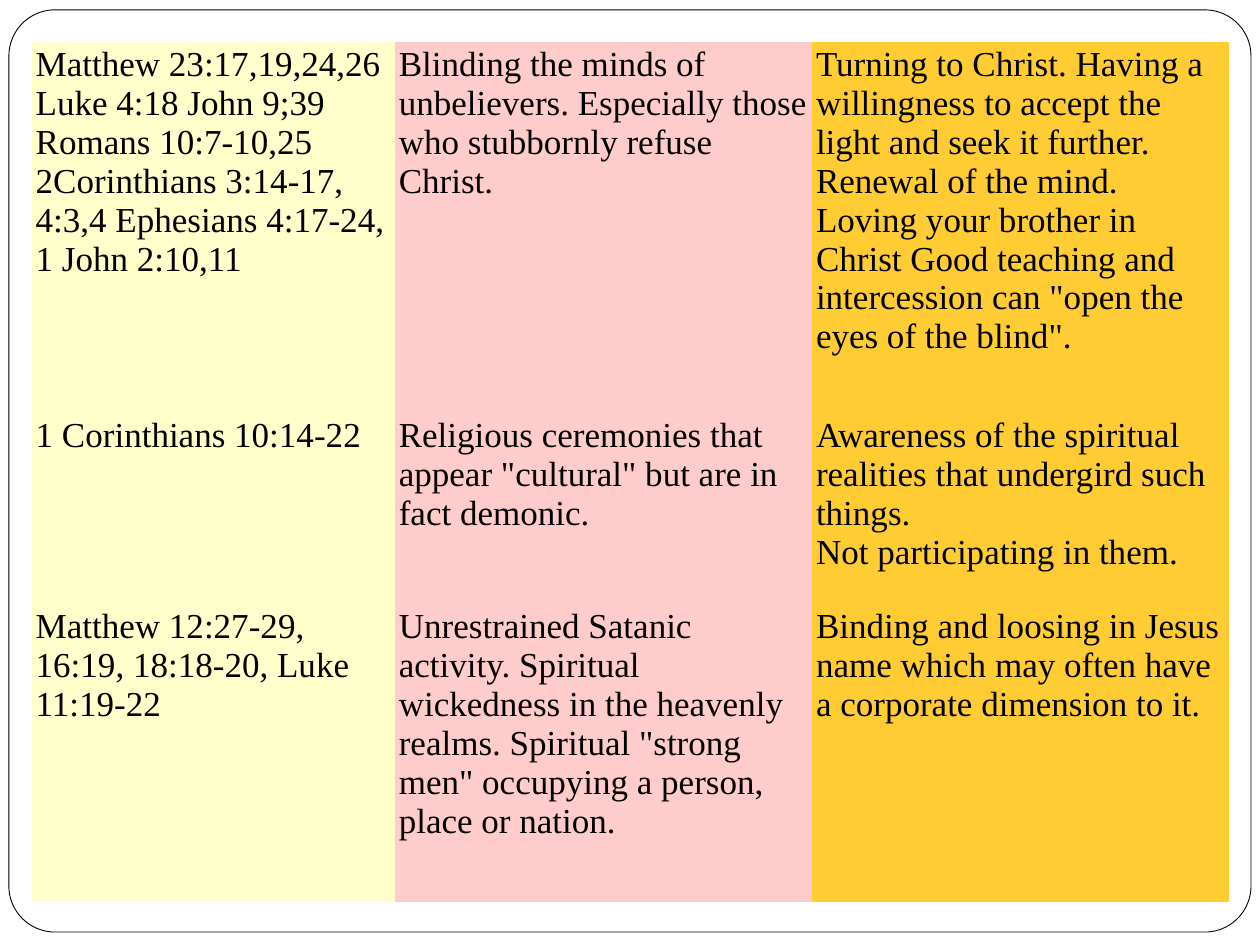
import dataclasses

import pptx
import pptx.dml.color
import pptx.enum.shapes
import pptx.util

Cm = pptx.util.Cm
RGB = pptx.dml.color.RGBColor.from_string


@dataclasses.dataclass(frozen=True)
class Theme:
    paper: str = "FFFFFF"
    ink: str = "000000"
    columns: tuple = ("FFFFCC", "FFCCCC", "FFCC33")  # scripture, problem, remedy
    font: str = "Times New Roman"
    text_size: int = 20
    frame_line: float = 0.5


THEME = Theme()
NO_STYLE_NO_GRID = "{2D5ABB26-0587-4C30-8999-92F81FD0307C}"

COLUMN_SHARES = (7.32, 8.41, 8.41)
ROW_SHARES = (7.47, 3.86, 6.02)

# Scripture, problem, remedy; a line break starts a new paragraph
TEACHINGS = [
    ("Matthew 23:17,19,24,26 Luke 4:18 John 9;39 Romans 10:7-10,25 "
     "2Corinthians 3:14-17, 4:3,4 Ephesians 4:17-24, 1 John 2:10,11",
     "Blinding the minds of unbelievers. Especially those who stubbornly refuse Christ.",
     "Turning to Christ. Having a willingness to accept the light and seek it further. "
     "Renewal of the mind. Loving your brother in Christ Good teaching and "
     'intercession can "open the eyes of the blind".'),
    ("1 Corinthians 10:14-22",
     'Religious ceremonies that appear "cultural" but are in fact demonic.',
     "Awareness of the spiritual realities that undergird such things.\n"
     "Not participating in them."),
    ("Matthew 12:27-29, 16:19, 18:18-20, Luke 11:19-22",
     "Unrestrained Satanic activity. Spiritual wickedness in the heavenly realms. "
     'Spiritual "strong men" occupying a person, place or nation.',
     "Binding and loosing in Jesus name which may often have a corporate dimension to it."),
]


def set_all(target, values):
    for name, value in values.items():
        setattr(target, name, value)


def add_frame(slide, left, top, width, height):
    """Rounded border around the whole slide."""
    frame = slide.shapes.add_shape(
        pptx.enum.shapes.MSO_SHAPE.ROUNDED_RECTANGLE,
        Cm(left), Cm(top), Cm(width), Cm(height))
    frame.adjustments[0] = 0.05
    frame.shadow.inherit = False
    frame.fill.solid()
    frame.fill.fore_color.rgb = RGB(THEME.paper)
    frame.line.color.rgb = RGB(THEME.ink)
    frame.line.width = pptx.util.Pt(THEME.frame_line)


def fill_cell(cell, text, color):
    inset = Cm(0.08)
    set_all(cell, {"text": text, "margin_left": inset, "margin_right": inset,
                   "margin_top": inset, "margin_bottom": inset})
    cell.fill.solid()
    cell.fill.fore_color.rgb = RGB(color)
    for paragraph in cell.text_frame.paragraphs:
        set_all(paragraph.font, {"name": THEME.font,
                                 "size": pptx.util.Pt(THEME.text_size)})
        paragraph.font.color.rgb = RGB(THEME.ink)


def add_teachings(slide, left, top, width, height):
    """Table of scriptures, problems and remedies, one colour per column."""
    graphic = slide.shapes.add_table(len(ROW_SHARES), len(COLUMN_SHARES),
                                     Cm(left), Cm(top), Cm(width), Cm(height))
    teachings = graphic.table
    set_all(teachings, {"first_row": False, "horz_banding": False})
    teachings._tbl.tblPr.find(pptx.oxml.ns.qn("a:tableStyleId")).text = NO_STYLE_NO_GRID

    for column, share in zip(teachings.columns, COLUMN_SHARES):
        column.width = Cm(width * share / sum(COLUMN_SHARES))
    for row, share, texts in zip(teachings.rows, ROW_SHARES, TEACHINGS):
        row.height = Cm(height * share / sum(ROW_SHARES))
        for cell, text, color in zip(row.cells, texts, THEME.columns):
            fill_cell(cell, text, color)


def main():
    deck = pptx.Presentation()
    set_all(deck, {"slide_width": Cm(25.4), "slide_height": Cm(19.05)})
    slide = deck.slides.add_slide(deck.slide_layouts[6])
    add_frame(slide, 0.18, 0.2, 25.04, 18.59)
    add_teachings(slide, 0.64, 0.84, 24.14, 17.35)
    deck.save("out.pptx")


if __name__ == "__main__":
    main()
